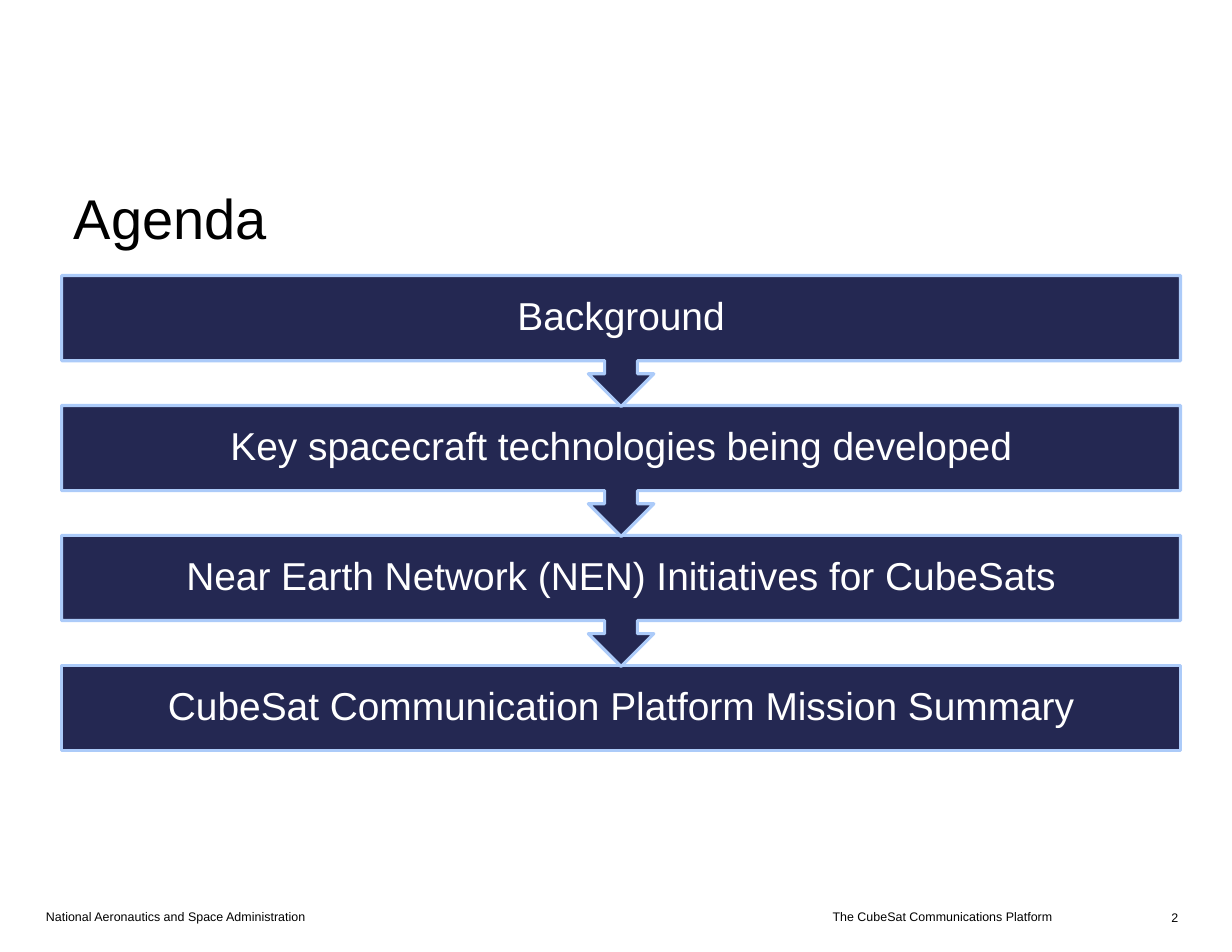
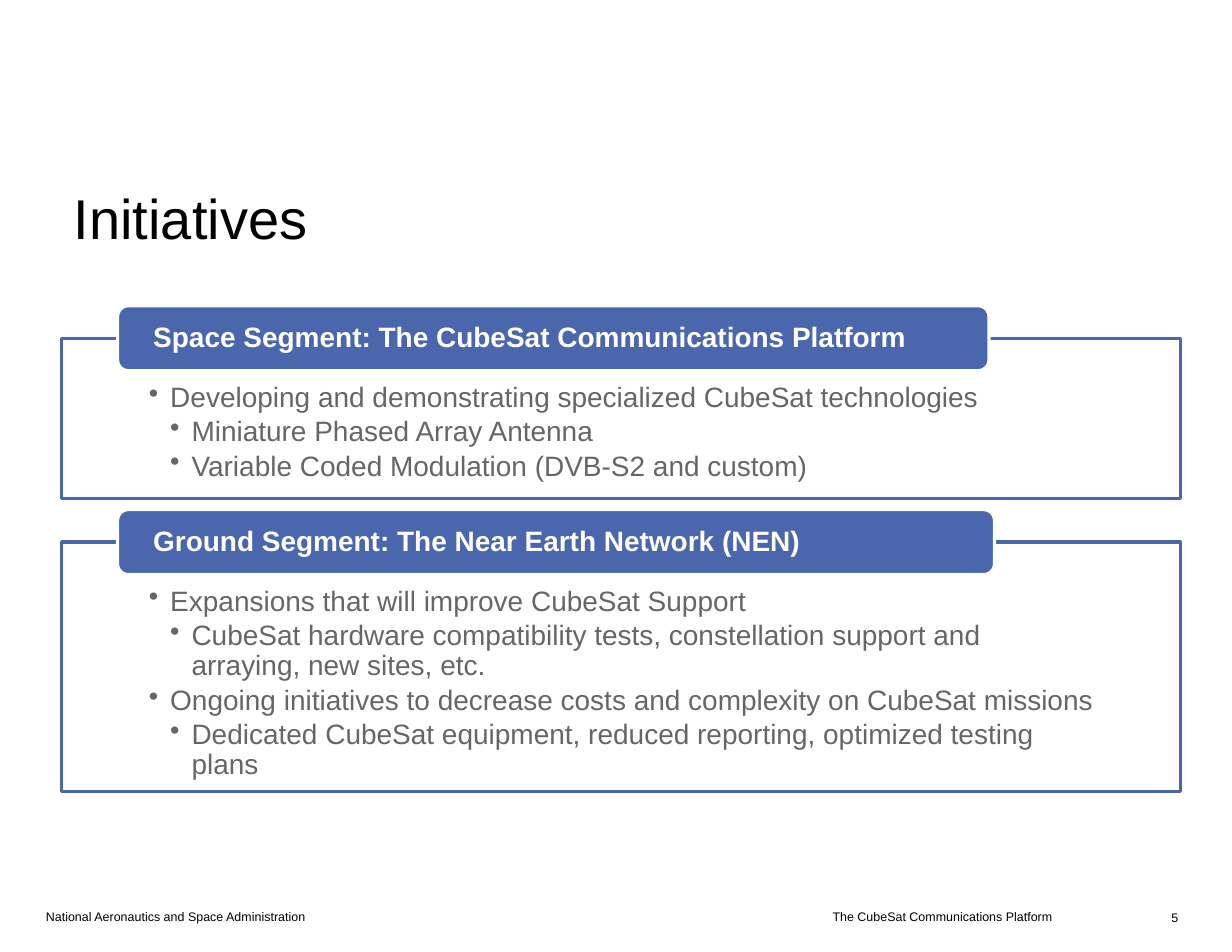
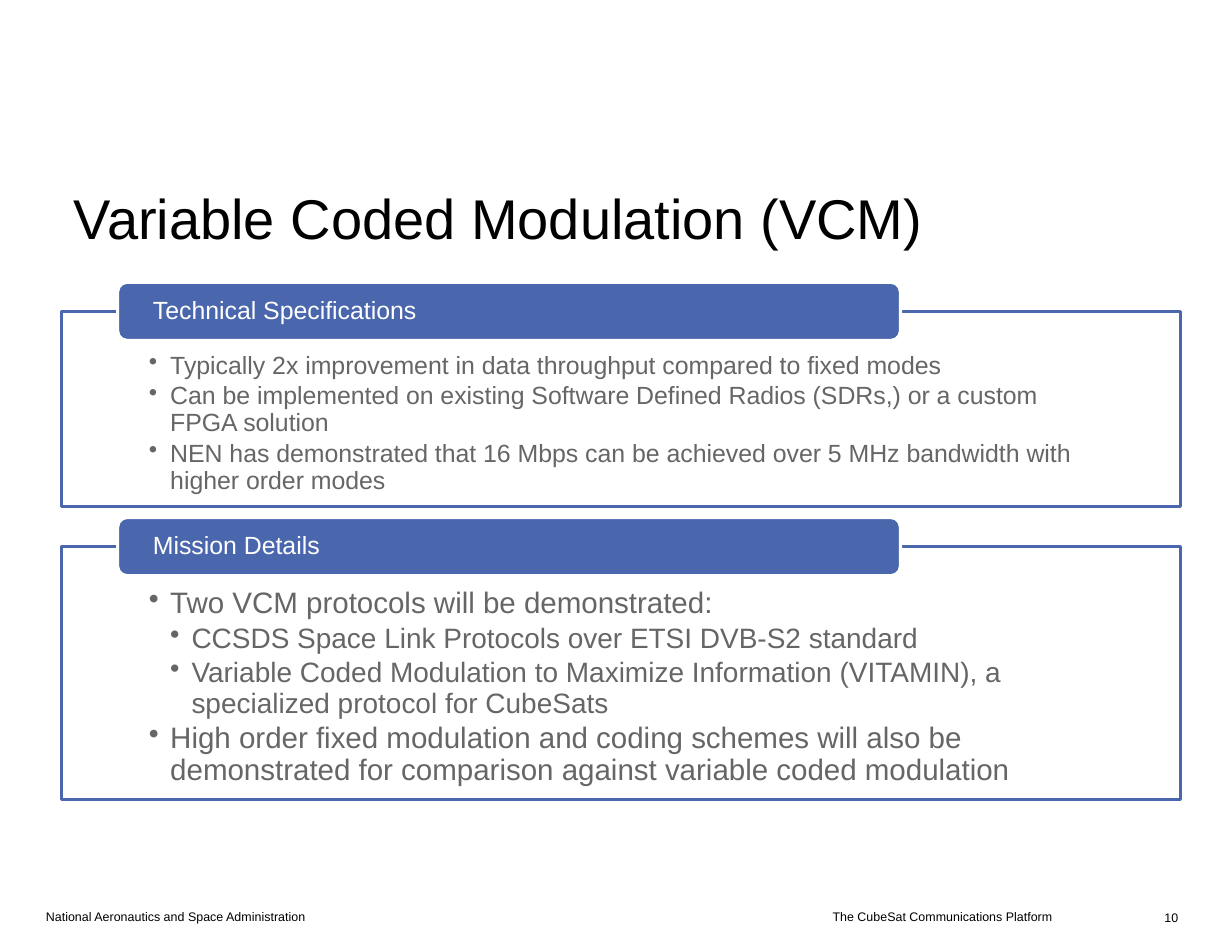
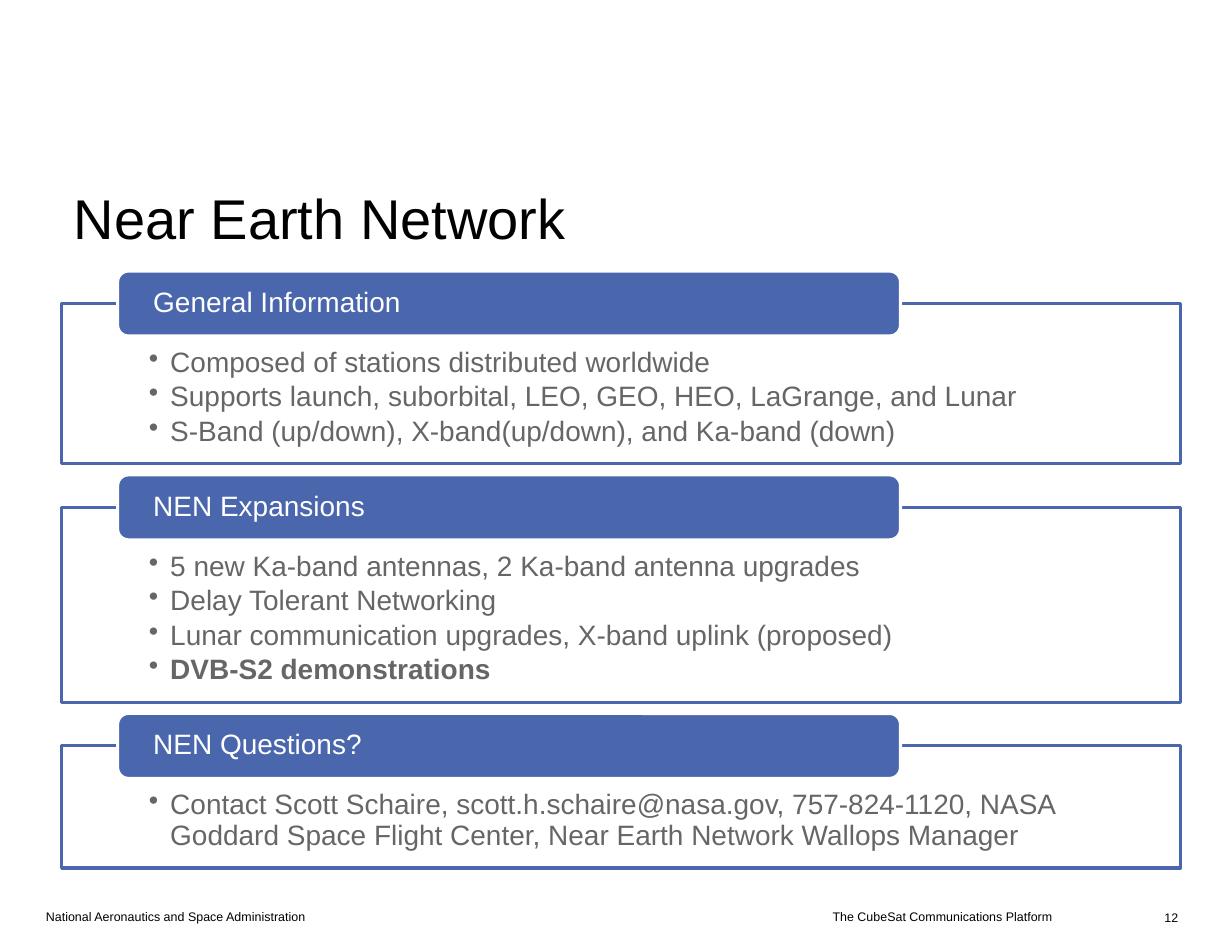
from dataclasses import dataclass

import pptx
import pptx.dml.color
import pptx.enum.shapes
import pptx.enum.text
import pptx.oxml
import pptx.oxml.ns
import pptx.util

Inches = pptx.util.Inches
Pt = pptx.util.Pt
RGBColor = pptx.dml.color.RGBColor
SHAPE = pptx.enum.shapes.MSO_SHAPE
ALIGN = pptx.enum.text.PP_ALIGN
ANCHOR = pptx.enum.text.MSO_ANCHOR

BLACK = RGBColor(0x00, 0x00, 0x00)
WHITE = RGBColor(0xFF, 0xFF, 0xFF)
GRAY = RGBColor(0x66, 0x66, 0x66)
NAVY = RGBColor(0x24, 0x28, 0x52)
PALE_BLUE = RGBColor(0xAC, 0xCB, 0xF9)
BLUE = RGBColor(0x4A, 0x66, 0xAC)

FONT = "Arial"
LEFT, WIDTH = 0.55, 9.99
MARGINS = (0.11, 0.06, 0.11, 0.06)
INDENT = 0.19
TAB_OFFSET = 0.5
TAB_GAP = 0.1


@dataclass
class Item:
    text: str
    level: int = 1
    bold: bool = False


@dataclass
class Panel:
    title: str
    height: float
    items: list
    sizes: tuple = (18, 18)
    tab_width: float = 6.99


def format_runs(p, size, color, bold=False):
    for r in p.runs:
        r.font.name = FONT
        r.font.size = Pt(size)
        r.font.color.rgb = color
        r.font.bold = bold


def set_frame(tf, margins, anchor):
    tf.word_wrap = True
    tf.vertical_anchor = anchor
    tf.margin_left, tf.margin_top, tf.margin_right, tf.margin_bottom = map(Inches, margins)


def set_line_text(sp, text, size, color, margins=MARGINS, anchor=ANCHOR.MIDDLE,
                  align=ALIGN.LEFT, bold=False, spacing=None):
    tf = sp.text_frame
    set_frame(tf, margins, anchor)
    tf.text = text
    p = tf.paragraphs[0]
    p.alignment = align
    p.line_spacing = spacing
    format_runs(p, size, color, bold)


def add_text(s, box, text, size, color, **options):
    sp = s.shapes.add_textbox(*map(Inches, box))
    set_line_text(sp, text, size, color, **options)


def add_box(s, kind, box, fill, line):
    sp = s.shapes.add_shape(kind, *map(Inches, box))
    sp.shadow.inherit = False
    sp.fill.solid()
    sp.fill.fore_color.rgb = fill
    sp.line.color.rgb = line
    sp.line.width = Pt(2)
    return sp


def set_opacity(sp, percent):
    color = sp.fill._xPr.find(".//" + pptx.oxml.ns.qn("a:srgbClr"))
    alpha = pptx.oxml.parse_xml(
        f'<a:alpha {pptx.oxml.ns.nsdecls("a")} val="{percent * 1000}"/>')
    color.append(alpha)


def add_bullet(p, level):
    pPr = p._p.get_or_add_pPr()
    pPr.set("marL", str(Inches(INDENT * level)))
    pPr.set("indent", str(-Inches(INDENT)))
    pPr.append(pptx.oxml.parse_xml(
        f'<a:buChar {pptx.oxml.ns.nsdecls("a")} char="•"/>'))


def add_base_slide(prs, title, number):
    """Blank slide with the shared title and footers."""
    s = prs.slides.add_slide(prs.slide_layouts[6])
    add_text(s, (0.3, 8.07, 4.47, 0.24), "National Aeronautics and Space Administration",
             8, BLACK, anchor=ANCHOR.BOTTOM)
    add_text(s, (LEFT, 1.42, WIDTH, 1.04), title, 36, BLACK)
    add_text(s, (4.83, 7.87, 4.68, 0.44), "The CubeSat Communications Platform",
             8, BLACK, anchor=ANCHOR.BOTTOM, align=ALIGN.RIGHT)
    add_text(s, (9.6, 7.89, 1.03, 0.43), str(number),
             8, BLACK, anchor=ANCHOR.BOTTOM, align=ALIGN.RIGHT)
    return s


def add_agenda(s, left, top, width, topics):
    """Stack of bars, each pointing down to the next; drawn from the bottom up."""
    pitch, bar_height, callout_height = 1.16, 0.76, 1.17
    last = len(topics) - 1
    for i, topic in reversed(list(enumerate(topics))):
        y = top + i * pitch
        bar = (left, y, width, bar_height)
        if i == last:
            add_box(s, SHAPE.RECTANGLE, bar, NAVY, PALE_BLUE)
        else:
            callout = add_box(s, SHAPE.UP_ARROW_CALLOUT,
                              (left, y, width, callout_height), NAVY, PALE_BLUE)
            callout.rotation = 180
        add_text(s, bar, topic, 25, WHITE, margins=(0.19,) * 4,
                 align=ALIGN.CENTER, spacing=0.9)


def add_panel(s, left, top, width, panel, tab_height, tab_size, tab_bold):
    """Outlined bullet list with a title tab centred on its top edge."""
    body = add_box(s, SHAPE.RECTANGLE, (left, top, width, panel.height), WHITE, BLUE)
    set_opacity(body, 90)
    tf = body.text_frame
    set_frame(tf, (0.78, tab_height / 2 + 0.11, 0.78, 0.13), ANCHOR.TOP)
    tf.text = "\n".join(item.text for item in panel.items)
    for p, item in zip(tf.paragraphs, panel.items):
        size = panel.sizes[item.level - 1]
        p.alignment = ALIGN.LEFT
        p.line_spacing = 0.9
        p.space_after = Pt(0.15 * size)
        add_bullet(p, item.level)
        format_runs(p, size, GRAY, item.bold)

    tab = add_box(s, SHAPE.ROUNDED_RECTANGLE,
                  (left + TAB_OFFSET, top - tab_height / 2, panel.tab_width, tab_height),
                  BLUE, WHITE)
    set_line_text(tab, panel.title, tab_size, WHITE, margins=(0.29, 0, 0.29, 0),
                  bold=tab_bold, spacing=0.9)


def add_panels(s, left, top, width, panels, tab_height=0.58, tab_size=18, tab_bold=False):
    for panel in panels:
        add_panel(s, left, top, width, panel, tab_height, tab_size, tab_bold)
        top += panel.height + TAB_GAP + tab_height / 2


def agenda_slide(prs):
    s = add_base_slide(prs, "Agenda", 2)
    add_agenda(s, LEFT, 2.46, WIDTH, [
        "Background",
        "Key spacecraft technologies being developed",
        "Near Earth Network (NEN) Initiatives for CubeSats",
        "CubeSat Communication Platform Mission Summary",
    ])


def initiatives_slide(prs):
    s = add_base_slide(prs, "Initiatives", 5)
    add_panels(s, LEFT, 3.02, WIDTH, [
        Panel("Space Segment: The CubeSat Communications Platform", 1.43, [
            Item("Developing and demonstrating specialized CubeSat technologies"),
            Item("Miniature Phased Array Antenna", 2),
            Item("Variable Coded Modulation (DVB-S2 and custom)", 2),
        ], tab_width=7.78),
        Panel("Ground Segment: The Near Earth Network (NEN)", 2.23, [
            Item("Expansions that will improve CubeSat Support"),
            Item("CubeSat hardware compatibility tests, constellation support and "
                 "arraying, new sites, etc.", 2),
            Item("Ongoing initiatives to decrease costs and complexity on CubeSat missions"),
            Item("Dedicated CubeSat equipment, reduced reporting, optimized testing plans", 2),
        ], tab_width=7.83),
    ], tab_bold=True)


def modulation_slide(prs):
    s = add_base_slide(prs, "Variable Coded Modulation (VCM)", 10)
    add_panels(s, LEFT, 2.78, WIDTH, [
        Panel("Technical Specifications", 1.74, [
            Item("Typically 2x improvement in data throughput compared to fixed modes"),
            Item("Can be implemented on existing Software Defined Radios (SDRs,) or a "
                 "custom FPGA solution"),
            Item("NEN has demonstrated that 16 Mbps can be achieved over 5 MHz bandwidth "
                 "with higher order modes"),
        ], sizes=(16, 16)),
        Panel("Mission Details", 2.26, [
            Item("Two VCM protocols will be demonstrated:"),
            Item("CCSDS Space Link Protocols over ETSI DVB-S2 standard", 2),
            Item("Variable Coded Modulation to Maximize Information (VITAMIN), a "
                 "specialized protocol for CubeSats", 2),
            Item("High order fixed modulation and coding schemes will also be "
                 "demonstrated for comparison against variable coded modulation"),
        ], sizes=(19, 18)),
    ], tab_height=0.52, tab_size=16)


def network_slide(prs):
    s = add_base_slide(prs, "Near Earth Network", 12)
    add_panels(s, LEFT, 2.71, WIDTH, [
        Panel("General Information", 1.43, [
            Item("Composed of stations distributed worldwide"),
            Item("Supports launch, suborbital, LEO, GEO, HEO, LaGrange, and Lunar"),
            Item("S-Band (up/down), X-band(up/down), and Ka-band (down)"),
        ]),
        Panel("NEN Expansions", 1.74, [
            Item("5 new Ka-band antennas, 2 Ka-band antenna upgrades"),
            Item("Delay Tolerant Networking"),
            Item("Lunar communication upgrades, X-band uplink (proposed)"),
            Item("DVB-S2 demonstrations", bold=True),
        ]),
        Panel("NEN Questions?", 1.09, [
            Item("Contact Scott Schaire, scott.h.schaire@nasa.gov, 757-824-1120, NASA "
                 "Goddard Space Flight Center, Near Earth Network Wallops Manager"),
        ]),
    ])


def main():
    prs = pptx.Presentation()
    prs.slide_width = Inches(11)
    prs.slide_height = Inches(8.5)
    agenda_slide(prs)
    initiatives_slide(prs)
    modulation_slide(prs)
    network_slide(prs)
    prs.save("out.pptx")


if __name__ == "__main__":
    main()
